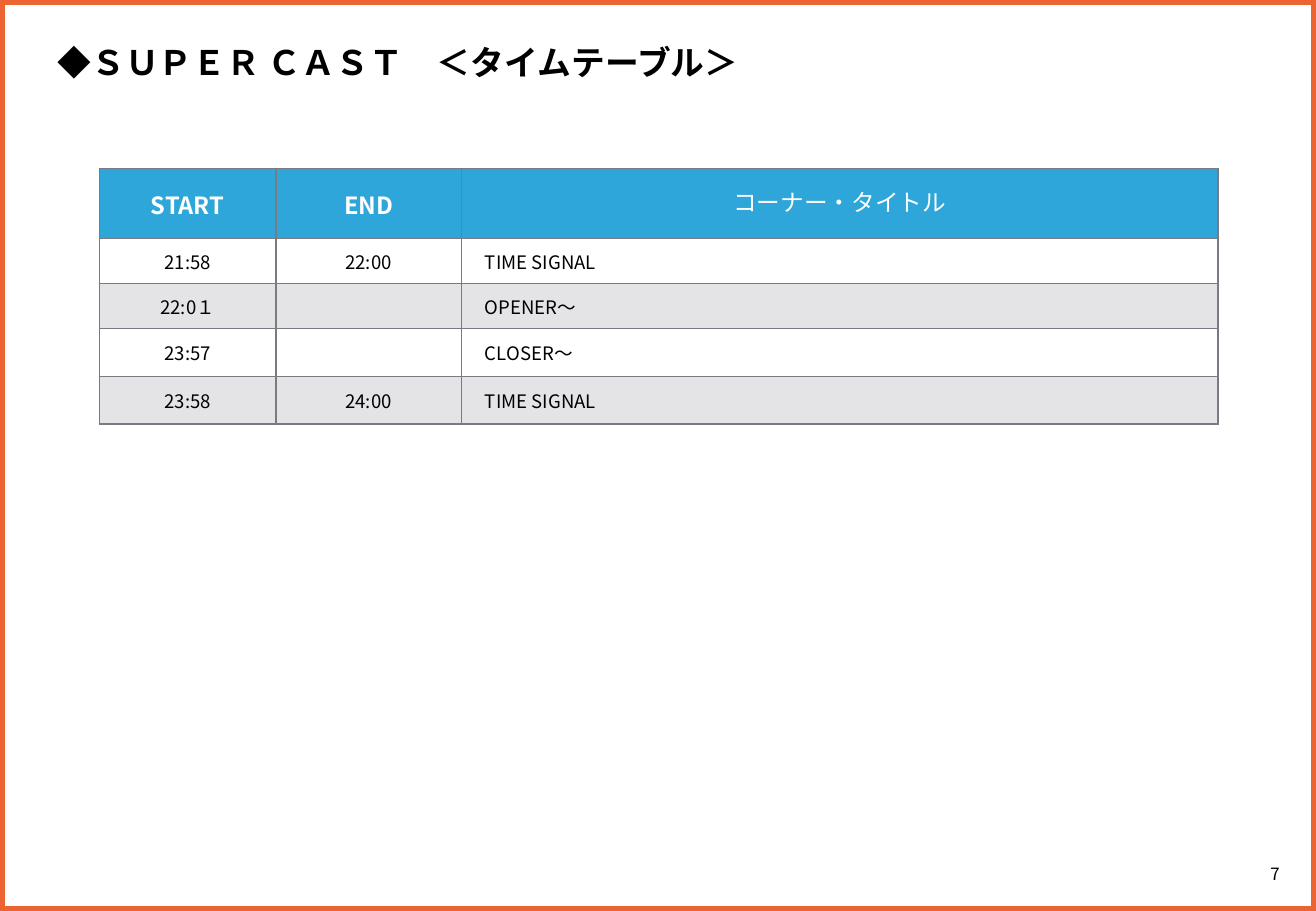
import pptx
import pptx.dml.color
import pptx.enum.shapes
import pptx.enum.text
import pptx.oxml
import pptx.oxml.ns
import pptx.util
from lxml import etree

Pt = pptx.util.Pt
ALIGN = pptx.enum.text.PP_ALIGN
MIDDLE = pptx.enum.text.MSO_ANCHOR.MIDDLE
qn = pptx.oxml.ns.qn

COLORS = {"frame": "EB6432", "header": "2EA6DA", "rule": "797B84",
          "text": "000000", "header_text": "FFFFFF"}
NOTO = "Noto Sans CJK JP"
PAGE = (0, 0, 780, 540)
COLUMN_WIDTHS = (104.5, 110, 448.5)
ROW_HEIGHTS = (41.5, 26.7, 26.7, 28.2, 28.2)
TITLE_INDENT = 14
TIMETABLE = (
    ("START", "END", "コーナー・タイトル"),
    ("21:58", "22:00", "TIME SIGNAL"),
    ("22:0１", "", "OPENER〜"),
    ("23:57", "", "CLOSER～"),
    ("23:58", "24:00", "TIME SIGNAL"),
)


def rgb(name):
    return pptx.dml.color.RGBColor.from_string(COLORS[name])


def format_run(run, size, color="text", bold=False, face=NOTO):
    """Give a run its font, for Latin and East Asian letters alike."""
    run.font.size = Pt(size)
    run.font.bold = bold
    run.font.color.rgb = rgb(color)
    run.font.name = face
    latin = run.font._element.find(qn("a:latin"))
    east_asian = etree.Element(qn("a:ea"), typeface=face)
    latin.addnext(east_asian)


def add_frame(slide, box):
    frame = slide.shapes.add_shape(
        pptx.enum.shapes.MSO_SHAPE.RECTANGLE, *map(Pt, box))
    frame.shadow.inherit = False
    frame.fill.background()
    frame.line.color.rgb = rgb("frame")
    frame.line.width = Pt(6)


def add_heading(slide, box):
    heading = slide.shapes.add_textbox(*map(Pt, box)).text_frame
    heading.word_wrap = True
    paragraph = heading.paragraphs[0]
    for words, bold in (("◆", False),
                        ("ＳＵＰＥＲ ＣＡＳＴ\u3000＜タイムテーブル＞".replace("\u3000", "　"), True)):
        run = paragraph.add_run()
        run.text = words
        format_run(run, 20, bold=bold)


def add_page_number(slide, box):
    number = slide.shapes.add_textbox(*map(Pt, box)).text_frame
    number.word_wrap = True
    number.vertical_anchor = MIDDLE
    number.text = "7"
    number.paragraphs[0].alignment = ALIGN.CENTER
    format_run(number.paragraphs[0].runs[0], 10)


def fill_cell(cell, row):
    """Colour the header, tint every second row and leave the rest clear."""
    if row == 0:
        cell.fill.solid()
        cell.fill.fore_color.rgb = rgb("header")
    elif row % 2 == 0:
        cell.fill.solid()
        cell.fill.fore_color.rgb = rgb("rule")
        tint = cell._tc.tcPr.find(".//" + qn("a:srgbClr"))
        etree.SubElement(tint, qn("a:alpha"), val="20000")
    else:
        cell.fill.background()


def rule_cell(cell):
    """Draw the four borders, which precede the fill in the cell properties."""
    for position, side in enumerate(("lnL", "lnR", "lnT", "lnB")):
        border = etree.Element(qn("a:" + side), w=str(Pt(1)))
        solid = etree.SubElement(border, qn("a:solidFill"))
        etree.SubElement(solid, qn("a:srgbClr"), val=COLORS["rule"])
        cell._tc.tcPr.insert(position, border)


def add_timetable(slide, box):
    table = slide.shapes.add_table(
        len(ROW_HEIGHTS), len(COLUMN_WIDTHS), *map(Pt, box)).table
    for column, width in zip(table.columns, COLUMN_WIDTHS):
        column.width = Pt(width)
    for row, height in zip(table.rows, ROW_HEIGHTS):
        row.height = Pt(height)

    for r, entries in enumerate(TIMETABLE):
        for c, entry in enumerate(entries):
            cell = table.cell(r, c)
            is_header, is_corner = r == 0, c == 2
            cell.margin_right = cell.margin_top = cell.margin_bottom = 0
            cell.margin_left = Pt(TITLE_INDENT) if is_corner and not is_header else 0
            cell.vertical_anchor = MIDDLE
            cell.text = entry
            paragraph = cell.text_frame.paragraphs[0]
            paragraph.alignment = (
                ALIGN.LEFT if is_corner and not is_header else ALIGN.CENTER)
            for run in paragraph.runs:
                if is_header:
                    format_run(run, 14, "header_text", bold=not is_corner,
                               face="Arial" if is_corner else NOTO)
                else:
                    format_run(run, 11)
            fill_cell(cell, r)
            rule_cell(cell)


def build_timetable_slide(presentation, box):
    left, top, width, height = box
    slide = presentation.slides.add_slide(presentation.slide_layouts[6])
    add_page_number(slide, (left + width - 48.5, top + height - 34.5, 48.5, 25))
    add_frame(slide, box)
    add_heading(slide, (left + 27, top + 21, 510.5, 31.5))
    add_timetable(slide, (left + 59, top + 100,
                          sum(COLUMN_WIDTHS), sum(ROW_HEIGHTS)))


def main():
    presentation = pptx.Presentation()
    presentation.slide_width, presentation.slide_height = map(Pt, PAGE[2:])
    build_timetable_slide(presentation, PAGE)
    presentation.save("out.pptx")


if __name__ == "__main__":
    main()
